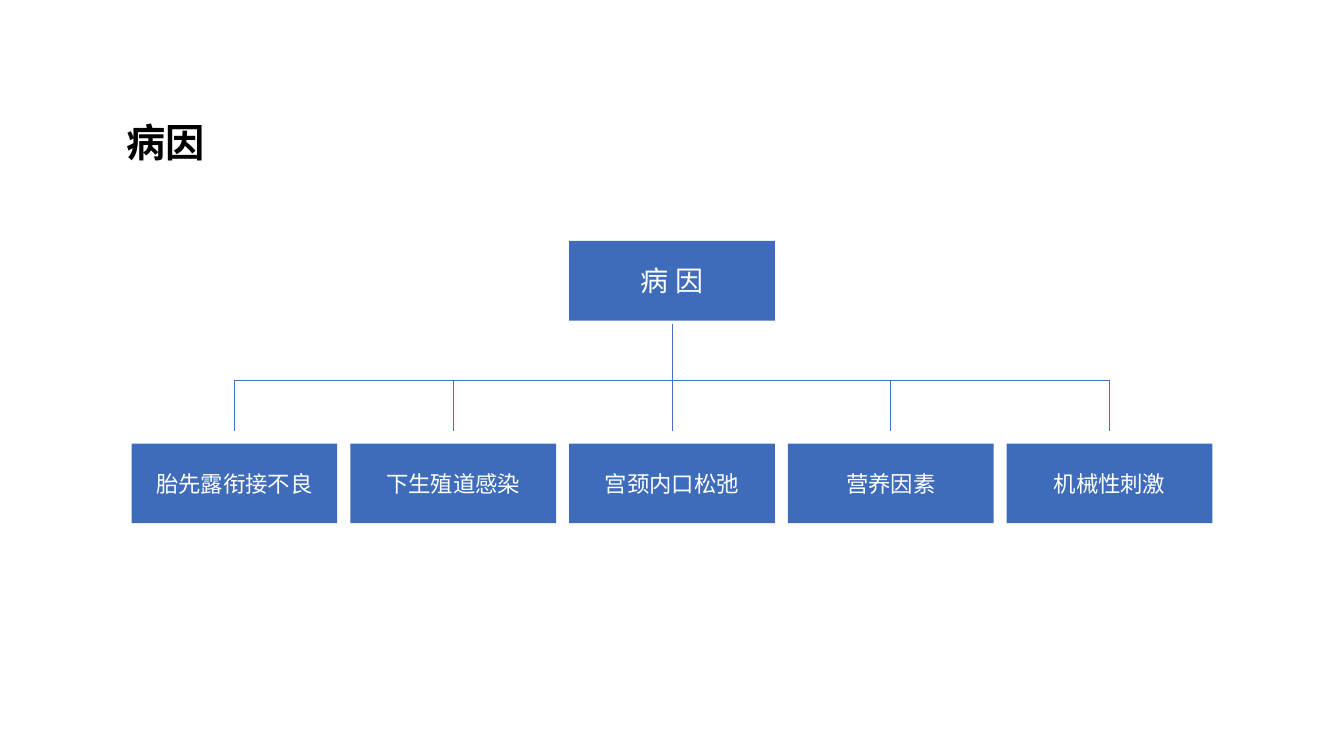
from dataclasses import dataclass

from lxml import etree
from pptx import Presentation
from pptx.dml.color import RGBColor
from pptx.enum.shapes import MSO_CONNECTOR, MSO_SHAPE
from pptx.enum.text import MSO_ANCHOR, MSO_AUTO_SIZE, PP_ALIGN
from pptx.oxml.ns import qn
from pptx.util import Inches, Pt

RECTANGLE = MSO_SHAPE.RECTANGLE
STRAIGHT = MSO_CONNECTOR.STRAIGHT
MIDDLE = MSO_ANCHOR.MIDDLE
CENTER = PP_ALIGN.CENTER
FIT_SHAPE = MSO_AUTO_SIZE.SHAPE_TO_FIT_TEXT

CAUSES = ["胎先露衔接不良", "下生殖道感染", "宫颈内口松弛", "营养因素", "机械性刺激"]
STEM_ROW, BUS_ROW, DROP_ROW = 0.41, 0.69, 0.94


@dataclass(frozen=True)
class Theme:
    """Colours, fonts and type sizes of the slide."""
    box_fill: RGBColor = RGBColor(0x3E, 0x6C, 0xBA)
    line: RGBColor = RGBColor(0x44, 0x72, 0xC4)
    title: RGBColor = RGBColor(0, 0, 0)
    label: RGBColor = RGBColor(0xFF, 0xFF, 0xFF)
    title_font: str = "Noto Sans CJK JP"
    label_font: str = "Arial"
    title_size: int = 28
    root_size: int = 20
    cause_size: int = 16
    line_width: float = 0.5


class CauseChart:
    """Draws a tree on a grid whose column 0 is the slide's centre."""
    WIDTH, HEIGHT = 13.33, 7.5
    COLUMN, ROW, TOP = 2.17, 2.01, 2.39
    BOX_WIDTH, BOX_HEIGHT = 2.04, 0.79

    def __init__(self, deck, theme):
        """Size the deck and add a blank page."""
        deck.slide_width, deck.slide_height = Inches(self.WIDTH), Inches(self.HEIGHT)
        self.page = deck.slides.add_slide(deck.slide_layouts[6])
        self.theme = theme

    def x(self, column):
        """Return the centre line of a column."""
        return Inches(self.WIDTH / 2 + column * self.COLUMN)

    def y(self, row):
        """Return the top of a row."""
        return Inches(self.TOP + row * self.ROW)

    def set_text(self, frame, text, font, size, color, bold=False):
        """Fill a frame with one styled paragraph."""
        frame.word_wrap = True
        para = frame.paragraphs[0]
        para.text = text
        para.font.name, para.font.size, para.font.bold = font, Pt(size), bold
        para.font.color.rgb = color
        return para

    def title(self, column, row, text):
        """Add the heading."""
        box = self.page.shapes.add_textbox(
            self.x(column), self.y(row), Inches(self.COLUMN * 0.5), Inches(self.ROW * 0.28))
        theme = self.theme
        self.set_text(box.text_frame, text, theme.title_font, theme.title_size, theme.title, True)
        box.text_frame.auto_size = FIT_SHAPE

    def box(self, column, row, text, size):
        """Add a filled box centred on a column."""
        width, height = Inches(self.BOX_WIDTH), Inches(self.BOX_HEIGHT)
        box = self.page.shapes.add_shape(
            RECTANGLE, self.x(column) - width // 2, self.y(row), width, height)
        box.shadow.inherit = False
        box.fill.solid()
        box.fill.fore_color.rgb = self.theme.box_fill
        box.line.fill.background()
        frame = box.text_frame
        frame.vertical_anchor = MIDDLE
        frame.margin_left = frame.margin_right = Inches(0.02)
        frame.margin_top = frame.margin_bottom = Inches(0.02)
        para = self.set_text(frame, text, self.theme.label_font, size, self.theme.label)
        para.alignment = CENTER

    def line(self, start, end):
        """Add a thin line between two (column, row) points."""
        line = self.page.shapes.add_connector(
            STRAIGHT, self.x(start[0]), self.y(start[1]), self.x(end[0]), self.y(end[1]))
        line.line.color.rgb = self.theme.line
        line.line.width = Pt(self.theme.line_width)
        etree.SubElement(line._element.spPr, qn("a:effectLst"))


def main():
    """Build and save the slide."""
    deck = Presentation()
    theme = Theme()
    chart = CauseChart(deck, theme)
    chart.title(-2.54, -0.63, "病因")
    chart.box(0, 0, "病 因", theme.root_size)
    reach = len(CAUSES) // 2
    chart.line((-reach, BUS_ROW), (reach, BUS_ROW))
    for column, cause in enumerate(CAUSES, -reach):
        chart.box(column, 1, cause, theme.cause_size)
        chart.line((column, BUS_ROW if column else STEM_ROW), (column, DROP_ROW))
    deck.save("out.pptx")


if __name__ == "__main__":
    main()
